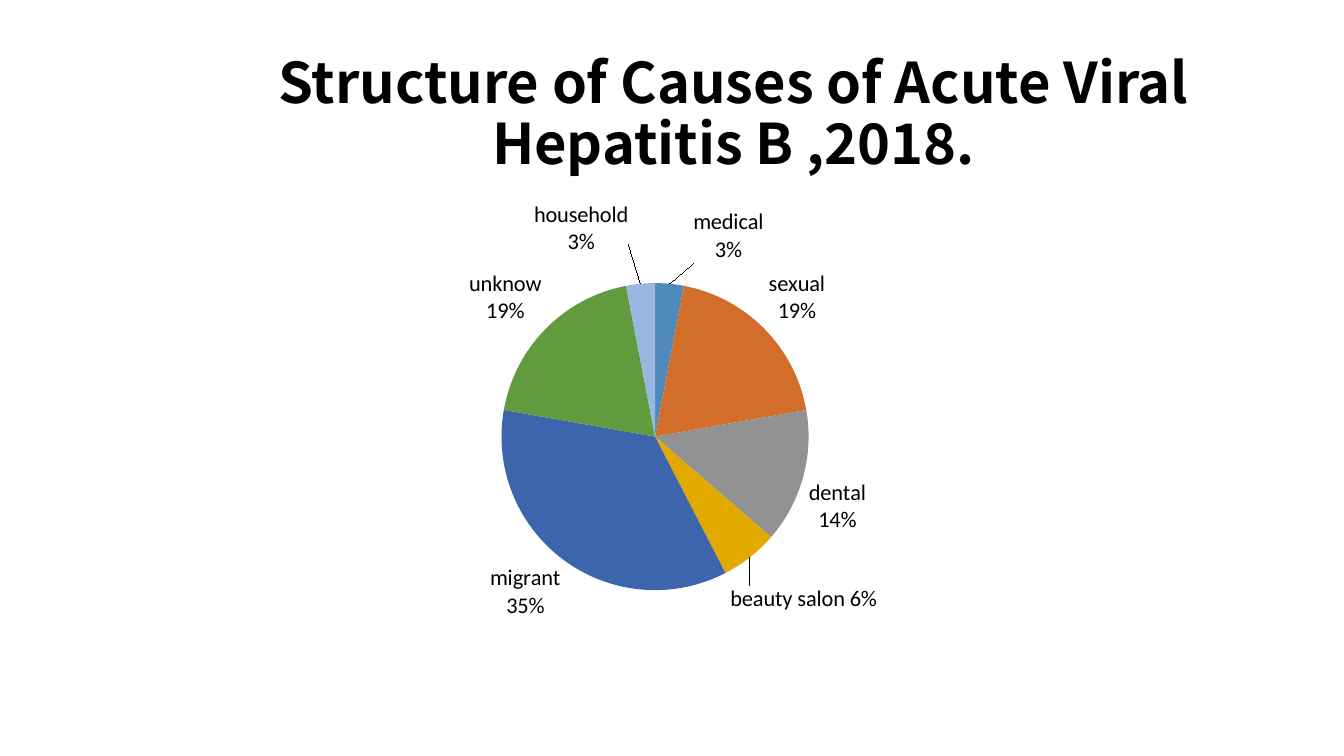
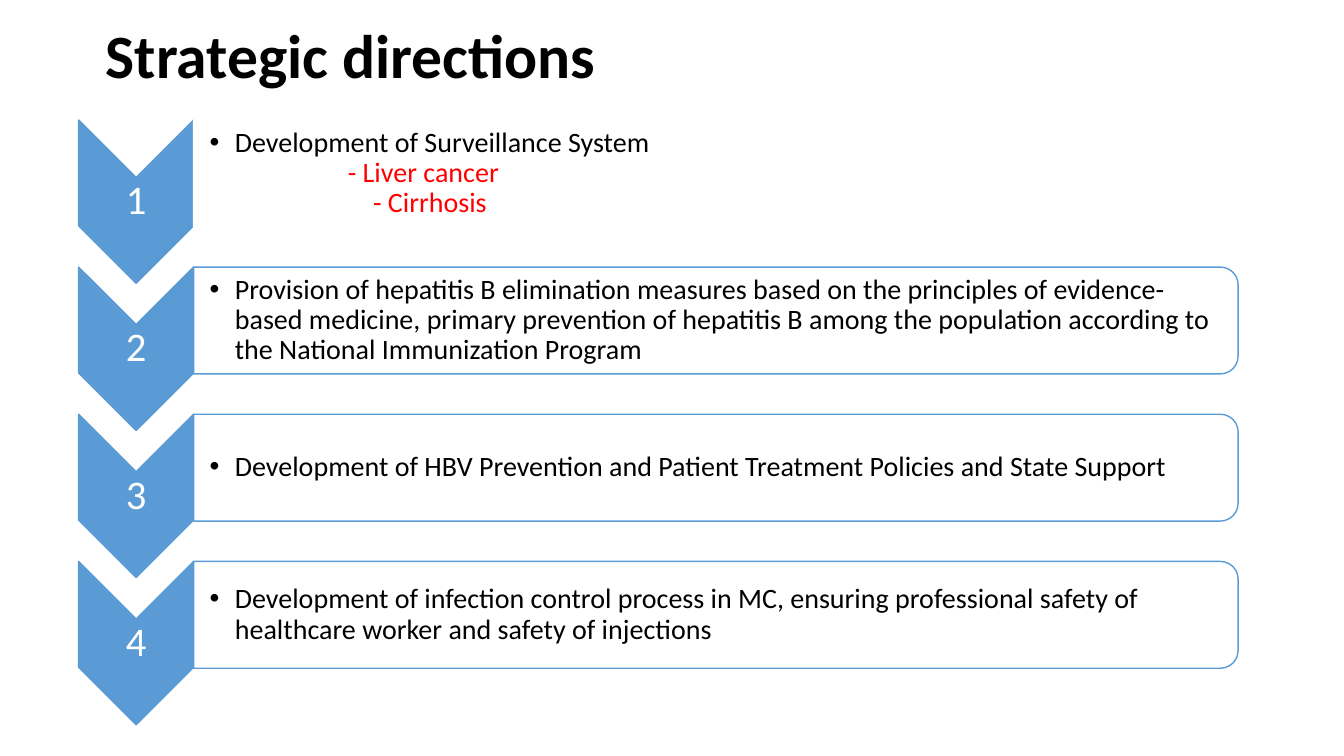
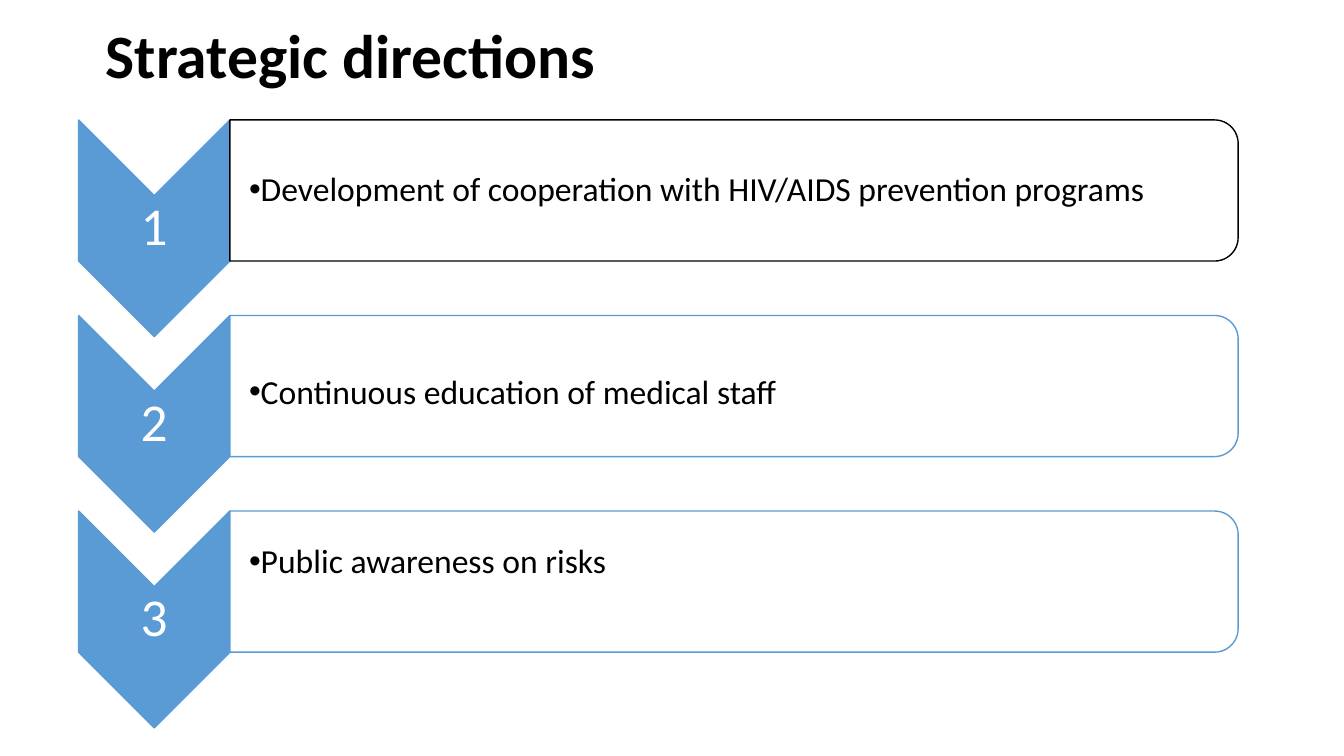
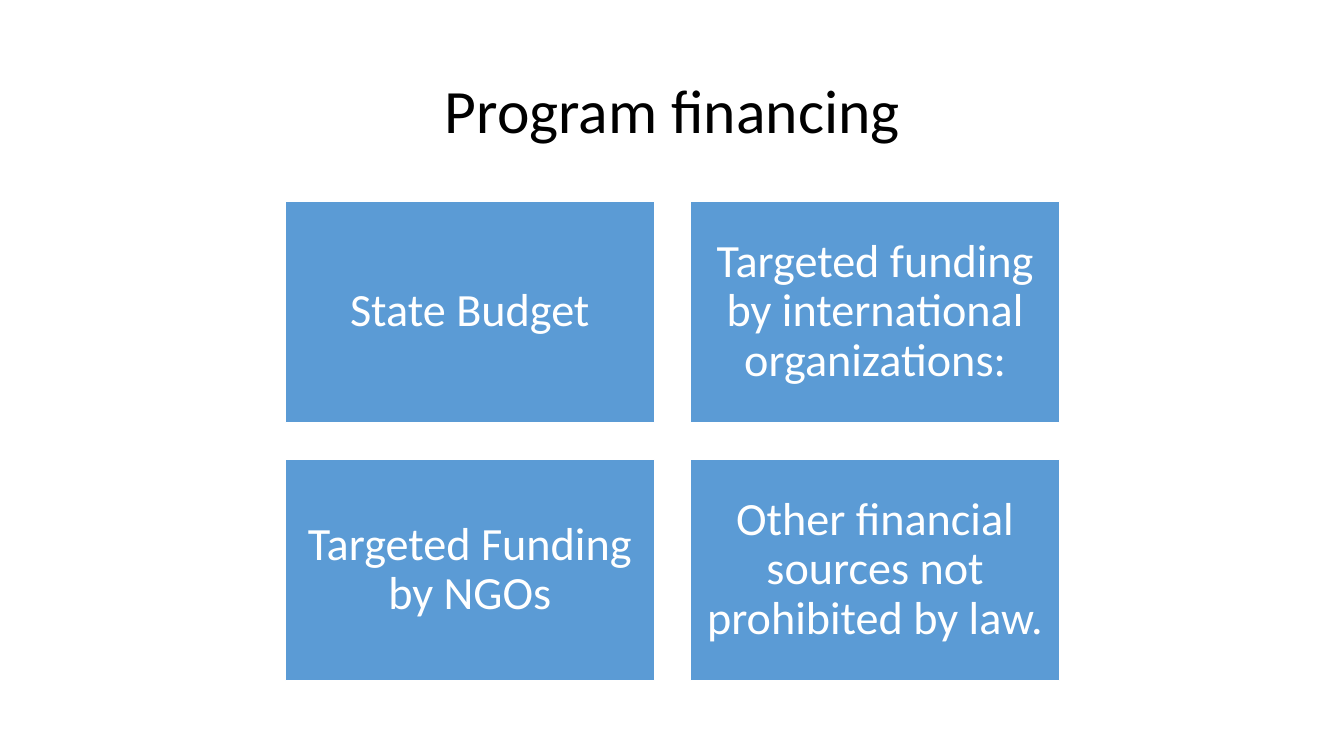
from pptx import Presentation
from pptx.chart.data import CategoryChartData
from pptx.dml.color import RGBColor
from pptx.enum.chart import XL_CHART_TYPE, XL_LABEL_POSITION
from pptx.enum.shapes import MSO_SHAPE
from pptx.enum.text import MSO_ANCHOR, MSO_AUTO_SIZE, PP_ALIGN
from pptx.oxml import parse_xml
from pptx.oxml.ns import nsdecls
from pptx.util import Inches, Pt

COLORS = {
    "text": "000000", "white": "FFFFFF", "blue": "5B9BD5", "red": "FF0000",
    "medical": "508ABD", "sexual": "D26E2A", "dental": "929292",
    "beauty salon": "E2AA00", "migrant": "3C65AE", "unknow": "629A3E",
    "household": "98B6E0",
}
FONT = "Calibri"
TITLE_STYLE = {"name": FONT, "size": Pt(44), "bold": True}
LIST_LEFT, LIST_RIGHT, LIST_TOP = 0.78, 12.28, 1.19

# category (also its colour), value, label separator,
# label offset as a share of the chart
CAUSES = [
    ("medical", 0.03, "\n", (0.02, -0.03)),
    ("sexual", 0.19, "\n", None),
    ("dental", 0.14, "\n", None),
    ("beauty salon", 0.06, " ", (-0.02, 0.05)),
    ("migrant", 0.35, "\n", None),
    ("unknow", 0.19, "\n", None),
    ("household", 0.03, "\n", (-0.01, -0.07)),
]

# Sizes of the two chevron lists
FOUR_STEPS = {"width": 1.14, "height": 1.62, "box": 1.06, "pitch": 1.46,
              "number": 29, "size": 20, "inset": 0.16, "hang": 0.25}
THREE_STEPS = {"width": 1.5, "height": 2.15, "box": 1.4, "pitch": 1.94,
               "number": 38, "size": 24, "inset": 0.19, "hang": 0}


def rgb(name):
    return RGBColor.from_string(COLORS[name])


def apply_format(target, values):
    for name, value in values.items():
        setattr(target, name, value)


def format_font(font, color="text", **values):
    apply_format(font, {"name": FONT, **values})
    font.color.rgb = rgb(color)


def format_frame(frame, inset, **values):
    sides = ("margin_left", "margin_top", "margin_right", "margin_bottom")
    apply_format(frame, {
        "word_wrap": True, "auto_size": MSO_AUTO_SIZE.NONE,
        "vertical_anchor": MSO_ANCHOR.MIDDLE,
        **dict.fromkeys(sides, Inches(inset)), **values,
    })


def add_title_slide(presentation, text, box, align=PP_ALIGN.LEFT,
                    frame_format=None, **font_values):
    slide = presentation.slides.add_slide(presentation.slide_layouts[5])
    title = slide.shapes.title
    apply_format(title, dict(zip(("left", "top", "width", "height"),
                                 map(Inches, box))))
    format_frame(title.text_frame, 0.1, **(frame_format or {}))
    paragraph = title.text_frame.paragraphs[0]
    apply_format(paragraph, {"alignment": align, "line_spacing": 0.9})
    run = paragraph.add_run()
    run.text = text
    format_font(run.font, **{**TITLE_STYLE, **font_values})
    return slide


def add_block(slide, kind, box, fill, line, rotation=0):
    """Add a shape; box is the area seen, also after a quarter turn."""
    left, top, width, height = box
    if rotation:
        left, top = left + (width - height) / 2, top + (height - width) / 2
        width, height = height, width
    shape = slide.shapes.add_shape(kind, *map(Inches, (left, top, width, height)))
    shape.rotation = rotation
    shape.shadow.inherit = False
    shape.fill.solid()
    shape.fill.fore_color.rgb = rgb(fill)
    shape.line.color.rgb = rgb(line)
    shape.line.width = Pt(1)
    return shape


def write_centered(frame, text, size, inset):
    format_frame(frame, inset)
    paragraph = frame.paragraphs[0]
    apply_format(paragraph, {"alignment": PP_ALIGN.CENTER, "line_spacing": 0.9})
    run = paragraph.add_run()
    run.text = text
    format_font(run.font, "white", size=Pt(size))


def set_bullet(paragraph, hang):
    properties = paragraph._p.get_or_add_pPr()
    properties.set("marL", str(Inches(hang)))
    properties.set("indent", str(-Inches(hang)))
    properties.append(parse_xml(f'<a:buFont {nsdecls("a")} typeface="Arial"/>'))
    properties.append(parse_xml(f'<a:buChar {nsdecls("a")} char="•"/>'))


def write_step(frame, text, details, sizes):
    lines = [(text, None)] + list(details)
    for index, (line, indent) in enumerate(lines):
        paragraph = frame.add_paragraph() if index else frame.paragraphs[0]
        paragraph.line_spacing = 0.9
        run = paragraph.add_run()
        run.text = line
        format_font(run.font, "red" if index else "text", size=Pt(sizes["size"]))
        if index:
            paragraph._p.get_or_add_pPr().set("marL", str(Inches(indent)))
        else:
            set_bullet(paragraph, sizes["hang"])


def add_steps(slide, steps, sizes):
    """Add numbered chevrons, each with a box at its right."""
    width, height, box_height = sizes["width"], sizes["height"], sizes["box"]
    box_left = LIST_LEFT + width
    box_width = LIST_RIGHT - box_left
    for index, step in enumerate(steps):
        top = LIST_TOP + index * sizes["pitch"]
        add_block(slide, MSO_SHAPE.CHEVRON, (LIST_LEFT, top, width, height),
                  "blue", "blue", 90)
        number_height = height - width
        number = slide.shapes.add_textbox(*map(Inches, (
            LIST_LEFT, top + width / 2, width, number_height)))
        write_centered(number.text_frame, str(index + 1), sizes["number"], 0.02)

        add_block(slide, MSO_SHAPE.ROUND_2_SAME_RECTANGLE,
                  (box_left, top, box_width, box_height),
                  "white", step.get("line", "blue"), 90)
        label = slide.shapes.add_textbox(*map(Inches, (
            box_left, top + 0.06, box_width - 0.06, box_height - 0.12)))
        format_frame(label.text_frame, 0.02, margin_left=Inches(sizes["inset"]),
                     margin_top=Inches(step.get("above", 0.02)),
                     margin_bottom=Inches(step.get("below", 0.02)))
        write_step(label.text_frame, step["text"], step.get("details", ()), sizes)


def manual_layout(**values):
    items = "".join(f'<c:{name} val="{value}"/>' for name, value in values.items())
    return parse_xml(f'<c:layout {nsdecls("c")}><c:manualLayout>{items}'
                     '</c:manualLayout></c:layout>')


def add_causes_pie(slide):
    data = CategoryChartData(number_format="0%")
    data.categories = [cause[0] for cause in CAUSES]
    data.add_series("Causes", [cause[1] for cause in CAUSES])
    chart = slide.shapes.add_chart(
        XL_CHART_TYPE.PIE, *map(Inches, (0.92, 2, 11.5, 4.76)), data).chart
    apply_format(chart, {"has_legend": False, "has_title": False})
    format_font(chart.font, size=Pt(14))
    plot = chart.plots[0]
    plot.vary_by_categories = True
    series = plot.series[0]

    # Slices and their labels
    for index, (category, value, separator, _) in enumerate(CAUSES):
        point = series.points[index]
        point.format.fill.solid()
        point.format.fill.fore_color.rgb = rgb(category)
        label = point.data_label
        label.text_frame.text = f"{category}{separator}{value:.0%}"
        for paragraph in label.text_frame.paragraphs:
            for run in paragraph.runs:
                format_font(run.font, size=Pt(16))
        label.position = XL_LABEL_POSITION.OUTSIDE_END
    apply_format(series.data_labels, {
        "show_value": True, "show_category_name": True, "number_format": "0%",
        "number_format_is_linked": False,
        "position": XL_LABEL_POSITION.OUTSIDE_END})
    format_font(series.data_labels.font, size=Pt(16))

    # Places of the pie and of the moved labels
    for label, (*_, offset) in zip(chart.element.xpath(".//c:dLbl"), CAUSES):
        if offset:
            label.insert(1, manual_layout(x=offset[0], y=offset[1]))
    plot_area = chart.element.xpath(".//c:plotArea")[0]
    for layout in plot_area.xpath("./c:layout"):
        plot_area.remove(layout)
    plot_area.insert(0, manual_layout(
        layoutTarget="inner", xMode="edge", yMode="edge",
        x=0.16, y=0.17, w=0.65, h=0.64))


def add_funding_grid(slide, sources):
    for index, source in enumerate(sources):
        row, column = divmod(index, 2)
        block = add_block(slide, MSO_SHAPE.RECTANGLE,
                          (2.83 + column * 4.02, 2 + row * 2.56, 3.66, 2.19),
                          "blue", "white")
        write_centered(block.text_frame, source, 33, 0.14)


def main():
    presentation = Presentation()
    presentation.slide_width = Inches(13.33)
    presentation.slide_height = Inches(7.5)

    # Causes
    slide = add_title_slide(
        presentation, "Structure of Causes of Acute Viral Hepatitis B ,2018.",
        (2.13, 0.4, 10.29, 0.99), PP_ALIGN.CENTER,
        {"vertical_anchor": MSO_ANCHOR.TOP, "margin_top": Inches(0.15)},
        name="Noto Sans CJK SC", size=Pt(40))
    add_causes_pie(slide)

    # Strategic directions
    step_lists = [
        (FOUR_STEPS, [
            {"text": "Development of Surveillance System", "line": "white",
             "details": [("- Liver cancer", 1.37), ("- Cirrhosis", 1.62)]},
            {"text": "Provision of hepatitis B elimination measures based on "
                     "the principles of evidence-based medicine, primary "
                     "prevention of hepatitis B among the population according "
                     "to the National Immunization Program"},
            {"text": "Development of HBV Prevention and Patient Treatment "
                     "Policies and State Support"},
            {"text": "Development of infection control process in MC, ensuring "
                     "professional safety of healthcare worker and safety of "
                     "injections"},
        ]),
        (THREE_STEPS, [
            {"text": "Development of cooperation with HIV/AIDS prevention "
                     "programs", "line": "text"},
            {"text": "Continuous education of medical staff", "above": 0.16},
            {"text": "Public awareness on risks", "below": 0.4},
        ]),
    ]
    for sizes, steps in step_lists:
        slide = add_title_slide(presentation, "Strategic directions",
                                (0.95, 0.18, 11.5, 0.8))
        add_steps(slide, steps, sizes)

    # Financing
    slide = add_title_slide(presentation, "Program financing",
                            (0.92, 0.4, 11.5, 1.45), PP_ALIGN.CENTER, bold=False)
    add_funding_grid(slide, [
        "State Budget", "Targeted funding by international organizations:",
        "Targeted Funding by NGOs",
        "Other financial sources not prohibited by law."])

    presentation.save("out.pptx")


if __name__ == "__main__":
    main()
